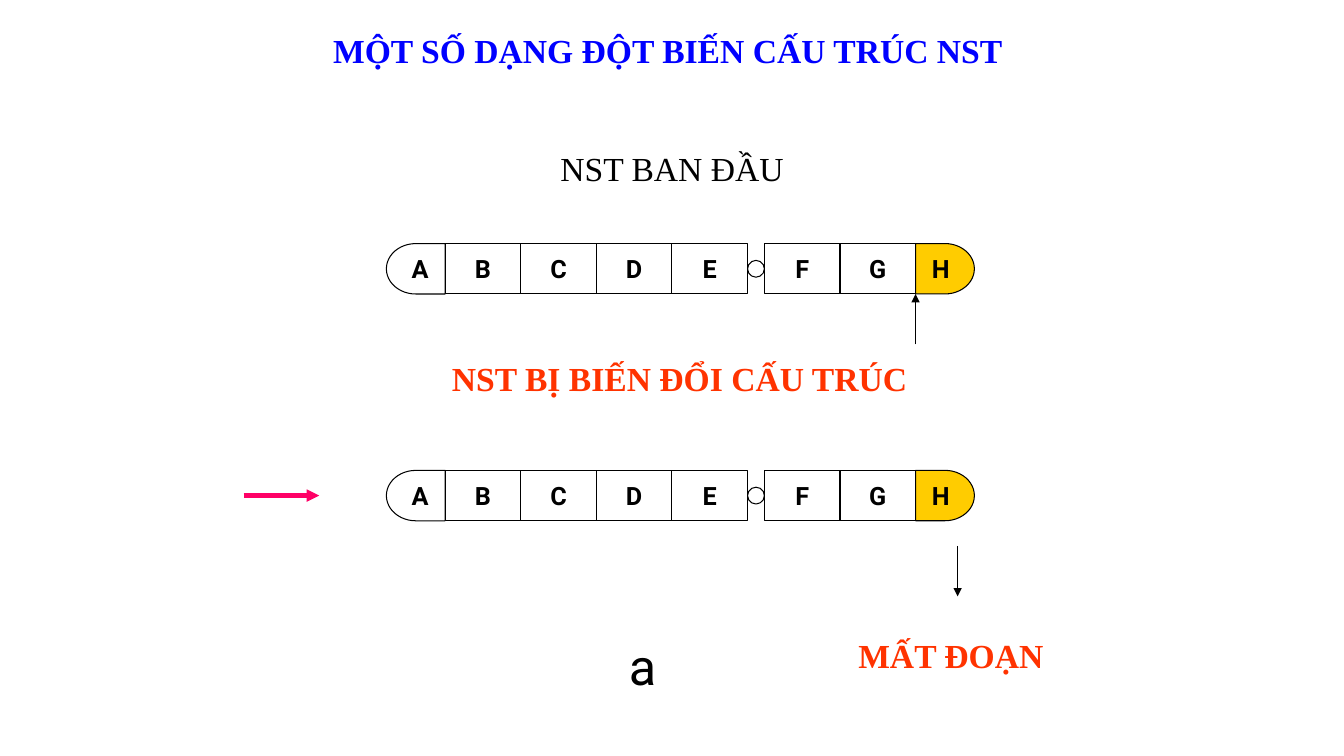
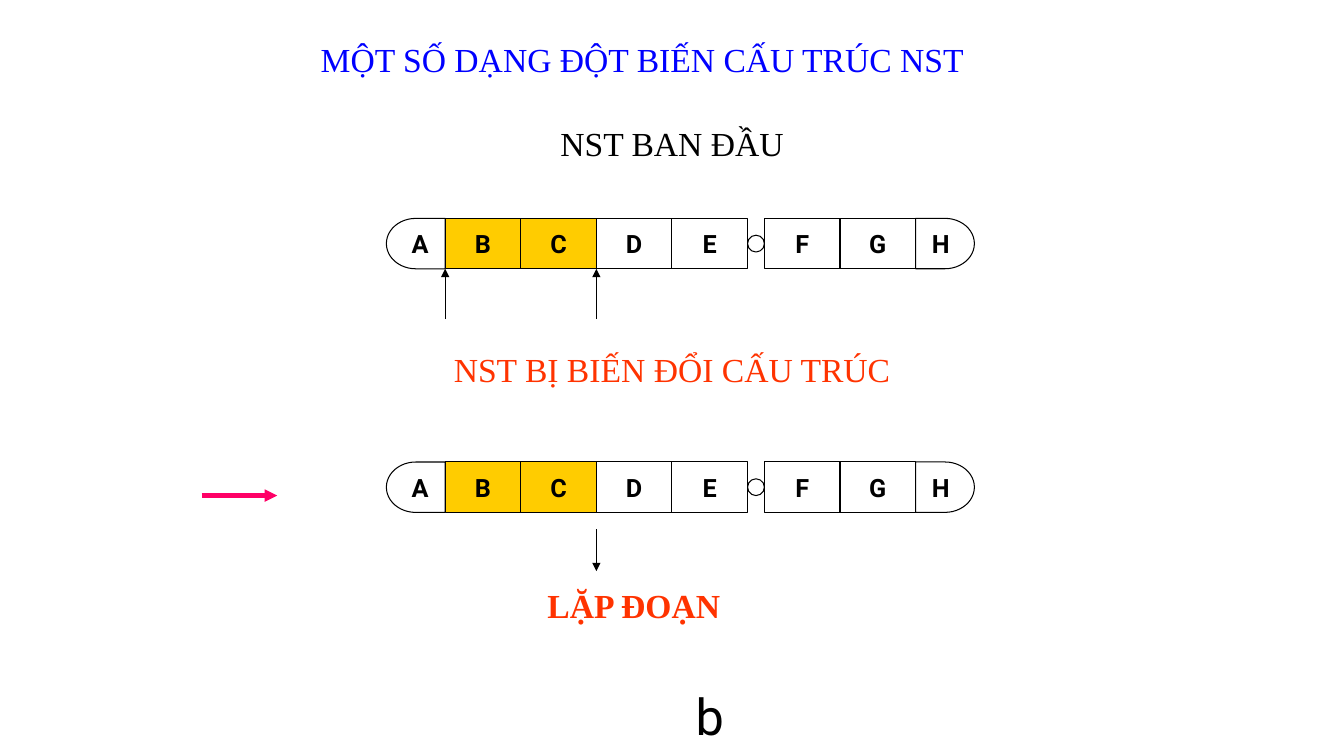
"""Build two slides on structural mutations of the chromosome."""
from lxml.etree import SubElement
from pptx import Presentation
from pptx.dml.color import RGBColor
from pptx.enum.shapes import MSO_CONNECTOR, MSO_SHAPE
from pptx.enum.text import MSO_ANCHOR, MSO_AUTO_SIZE, PP_ALIGN
from pptx.oxml.ns import qn
from pptx.util import Emu, Pt

PX = 9525
BLACK = RGBColor(0x00, 0x00, 0x00)
BLUE = RGBColor(0x00, 0x00, 0xFF)
RED = RGBColor(0xFF, 0x33, 0x00)
PINK = RGBColor(0xFF, 0x00, 0x66)
GOLD = RGBColor(0xFF, 0xCC, 0x00)

PLAIN = {"name": "Times New Roman", "size": Pt(24), "bold": False}
STRONG = {**PLAIN, "bold": True}
GENE = {"name": "Roboto", "size": Pt(18), "bold": True}
LETTER = {"name": "Roboto", "size": Pt(36), "bold": False}

TITLE = "MỘT SỐ DẠNG ĐỘT BIẾN CẤU TRÚC NST"
BEFORE = "NST BAN ĐẦU"
AFTER = "NST BỊ BIẾN ĐỔI CẤU TRÚC"

GENES = "ABCDE FGH"
CHROMOSOME_LEFT = 368
GENE_WIDTH, GENE_HEIGHT = 72, 48
END_WIDTH = 56
CENTROMERE = 16


def px(*lengths):
    """Turn pixel lengths into EMU."""
    return [Emu(length * PX) for length in lengths]


def set_values(target, values):
    """Set each named attribute of the target."""
    for name, value in values.items():
        setattr(target, name, value)


def write(frame, text, style, color, align):
    """Write one styled paragraph into a text frame."""
    para = frame.paragraphs[0]
    para.alignment = align
    span = para.add_run()
    span.text = text
    set_values(span.font, style)
    span.font.color.rgb = color


def add_label(page, text, place, style, color, align=PP_ALIGN.CENTER, wrap=True):
    """Add a text box at a left, top, width and height."""
    frame = page.shapes.add_textbox(*px(*place)).text_frame
    set_values(frame, {"word_wrap": wrap, "auto_size": MSO_AUTO_SIZE.SHAPE_TO_FIT_TEXT})
    write(frame, text, style, color, align)


def add_part(group, preset, place, fill=None):
    """Add an outlined part of a chromosome, hollow unless a fill is given."""
    shape = group.shapes.add_shape(preset, *px(*place))
    shape.shadow.inherit = False
    if fill is None:
        shape.fill.background()
    else:
        shape.fill.solid()
        shape.fill.fore_color.rgb = fill
    shape.line.color.rgb = BLACK
    shape.line.width = Pt(0.75)
    return shape


def add_chromosome(page, top, marked):
    """Add a row of genes with rounded ends, a centromere and marked genes."""
    group = page.shapes.add_group_shape()
    left = CHROMOSOME_LEFT
    for gene in GENES:
        if gene == " ":
            middle = top + (GENE_HEIGHT - CENTROMERE) // 2
            add_part(group, MSO_SHAPE.OVAL, (left, middle, CENTROMERE, CENTROMERE))
            left += CENTROMERE
            continue
        is_end = gene in (GENES[0], GENES[-1])
        preset = MSO_SHAPE.FLOWCHART_DELAY if is_end else MSO_SHAPE.FLOWCHART_PROCESS
        width = END_WIDTH if is_end else GENE_WIDTH
        fill = GOLD if gene in marked else None
        shape = add_part(group, preset, (left, top, width, GENE_HEIGHT), fill)
        frame = shape.text_frame
        set_values(frame, {"word_wrap": False, "vertical_anchor": MSO_ANCHOR.MIDDLE})
        write(frame, gene, GENE, BLACK, PP_ALIGN.CENTER)
        if gene == GENES[0]:
            shape.rotation = 180
            shape.element.txBody.bodyPr.set("rot", "10800000")
        left += width


def add_arrow(page, start, end, color=BLACK, weight=0.75):
    """Add a straight arrow with its head at the end point."""
    arrow = page.shapes.add_connector(MSO_CONNECTOR.STRAIGHT, *px(*start, *end))
    arrow.line.color.rgb = color
    arrow.line.width = Pt(weight)
    properties = arrow.element.spPr
    SubElement(properties.get_or_add_ln(), qn("a:tailEnd"), type="triangle")
    SubElement(properties, qn("a:effectLst"))


def add_pointer(page, left):
    """Add the thick arrow that points at the changed chromosome."""
    add_arrow(page, (left, 472), (left + 72, 472), PINK, 3)


def add_page(deck):
    """Add a blank slide."""
    return deck.slides.add_slide(deck.slide_layouts[6])


def add_deletion(deck):
    """Add the slide on the loss of a segment."""
    page = add_page(deck)
    add_label(page, TITLE, (216, 24, 840, 48), STRONG, BLUE)
    add_label(page, BEFORE, (408, 136, 464, 48), PLAIN, BLACK)
    add_chromosome(page, 232, "H")
    add_arrow(page, (872, 328), (872, 280))
    add_label(page, AFTER, (421, 336, 458, 49), STRONG, RED, PP_ALIGN.LEFT, False)
    add_chromosome(page, 448, "H")
    add_pointer(page, 232)
    add_arrow(page, (912, 520), (912, 568))
    add_label(page, "MẤT ĐOẠN", (808, 600, 208, 48), STRONG, RED, PP_ALIGN.LEFT)
    add_label(page, "a", (568, 600, 88, 67), LETTER, BLACK)


def add_duplication(deck):
    """Add the slide on the repeat of a segment."""
    page = add_page(deck)
    add_label(page, TITLE, (296, 32, 635, 48), PLAIN, BLUE, PP_ALIGN.LEFT, False)
    add_label(page, BEFORE, (408, 112, 464, 48), PLAIN, BLACK)
    add_chromosome(page, 208, "BC")
    for left in (424, 568):
        add_arrow(page, (left, 304), (left, 256))
    add_label(page, AFTER, (392, 328, 496, 48), PLAIN, RED)
    add_chromosome(page, 440, "BC")
    add_pointer(page, 192)
    add_arrow(page, (568, 504), (568, 544))
    add_label(page, "LẶP ĐOẠN", (512, 552, 240, 48), STRONG, RED, PP_ALIGN.LEFT)
    add_label(page, "b", (632, 648, 88, 67), LETTER, BLACK)


def main():
    """Build and save the deck."""
    deck = Presentation()
    deck.slide_width, deck.slide_height = px(1280, 720)
    add_deletion(deck)
    add_duplication(deck)
    deck.save("out.pptx")


if __name__ == "__main__":
    main()
